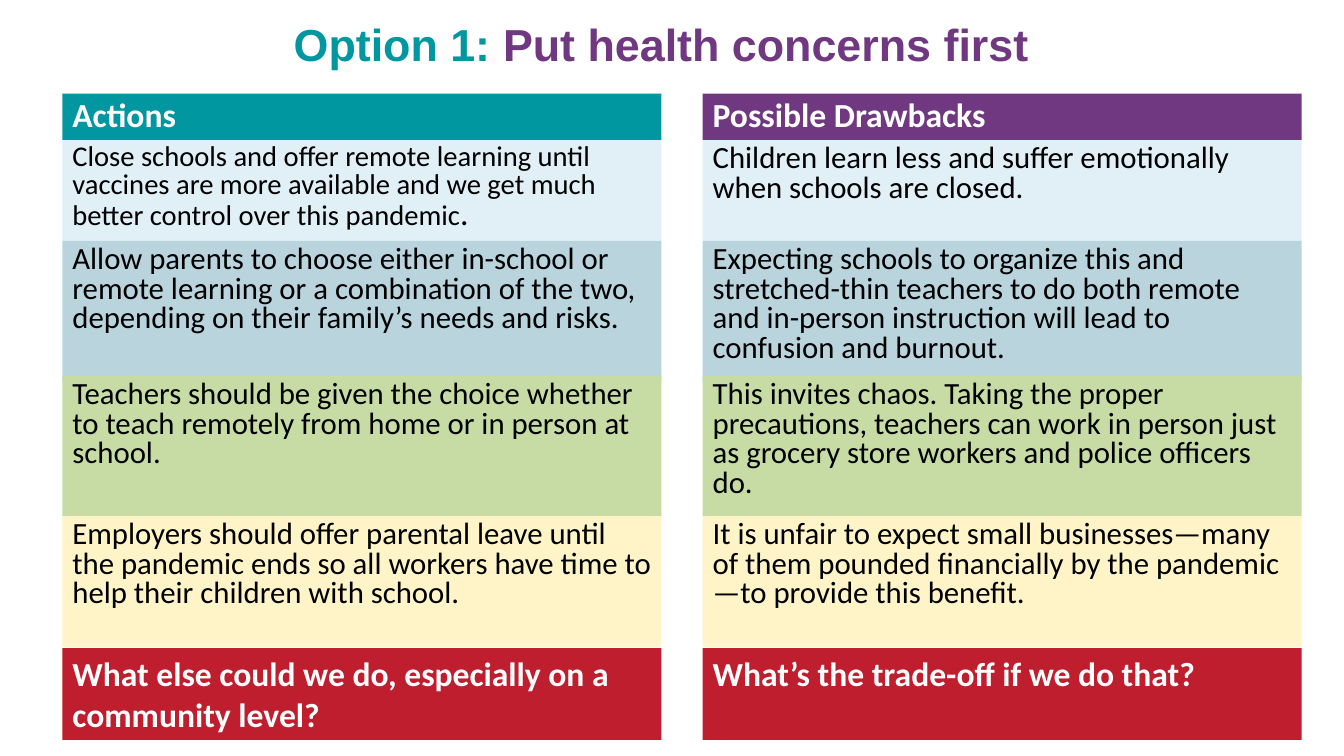
from dataclasses import dataclass

from pptx import Presentation
from pptx.dml.color import RGBColor
from pptx.enum.shapes import MSO_SHAPE
from pptx.enum.text import MSO_ANCHOR, MSO_AUTO_SIZE, PP_ALIGN
from pptx.util import Inches, Pt

RECTANGLE = MSO_SHAPE.RECTANGLE
TOP, MIDDLE, BOTTOM = MSO_ANCHOR.TOP, MSO_ANCHOR.MIDDLE, MSO_ANCHOR.BOTTOM
LEFT, CENTER = PP_ALIGN.LEFT, PP_ALIGN.CENTER
FIXED, GROW = MSO_AUTO_SIZE.NONE, MSO_AUTO_SIZE.SHAPE_TO_FIT_TEXT

TEAL, PURPLE, RED = "0097A0", "713882", "BE1E2D"
WHITE, BLACK = "FFFFFF", "000000"
ICE, STEEL, GREEN, CREAM = "E0F0F6", "B9D4DD", "C7DCA5", "FEF4C7"

HEADER = dict(size=24, color=WHITE, bold=True, anchor=BOTTOM)
BODY = dict(size=22, color=BLACK, line_spacing=0.8)
QUESTION = dict(size=24, color=WHITE, bold=True, line_spacing=1, before=0, fit=GROW)


def rgb(value):
    return RGBColor.from_string(value)


def add_span(para, text, font="Calibri", size=22, color=BLACK, bold=False):
    span = para.add_run()
    span.text = text
    span.font.name = font
    span.font.size = Pt(size)
    span.font.bold = bold
    span.font.color.rgb = rgb(color)


def write(frame, text, anchor=TOP, align=LEFT, line_spacing=0.9, before=10,
          fit=FIXED, **font):
    frame.word_wrap = True
    frame.auto_size = fit
    frame.vertical_anchor = anchor
    para = frame.paragraphs[0]
    para.alignment = align
    para.line_spacing = line_spacing
    para.space_before = Pt(before)
    spans = [(text, {})] if isinstance(text, str) else text
    for words, changes in spans:
        add_span(para, words, **{**font, **changes})


@dataclass
class OptionPage:
    page: object
    left: float = 0.62
    column_width: float = 5.94
    column_step: float = 6.35
    row_tops: tuple = (0.93, 1.39, 2.39, 3.73, 5.12, 6.43)
    row_heights: tuple = (0.46, 1, 1.39, 1.39, 1.3, 0.91)

    def title(self, spans):
        box = self.page.shapes.add_textbox(
            Inches(0.81), Inches(0.12), Inches(11.5), Inches(0.7))
        write(box.text_frame, spans, anchor=MIDDLE, align=CENTER, before=0,
              font="Arial", size=32, bold=True)

    def cell(self, column, row, text, fill, **style):
        box = self.page.shapes.add_shape(
            RECTANGLE,
            Inches(self.left + column * self.column_step),
            Inches(self.row_tops[row]),
            Inches(self.column_width),
            Inches(self.row_heights[row]))
        box.shadow.inherit = False
        box.fill.solid()
        box.fill.fore_color.rgb = rgb(fill)
        box.line.fill.background()
        write(box.text_frame, text, **style)


CLOSE_SCHOOLS = [
    ("Close schools and offer remote learning until vaccines are more available "
     "and we get much better control over this pandemic", {"size": 20.4}),
    (".", {"size": 24.1}),
]

ROWS = [
    ((TEAL, PURPLE), HEADER, ("Actions", "Possible Drawbacks")),
    ((ICE, ICE), BODY, (
        CLOSE_SCHOOLS,
        "Children learn less and suffer emotionally when schools are closed.")),
    ((STEEL, STEEL), BODY, (
        "Allow parents to choose either in-school or remote learning or a "
        "combination of the two, depending on their family’s needs and risks.",
        "Expecting schools to organize this and stretched-thin teachers to do both "
        "remote and in-person instruction will lead to confusion and burnout.")),
    ((GREEN, GREEN), BODY, (
        "Teachers should be given the choice whether to teach remotely from home "
        "or in person at school.",
        "This invites chaos. Taking the proper precautions, teachers can work in "
        "person just as grocery store workers and police officers do.")),
    ((CREAM, CREAM), BODY, (
        "Employers should offer parental leave until the pandemic ends so all "
        "workers have time to help their children with school.",
        "It is unfair to expect small businesses—many of them pounded financially "
        "by the pandemic—to provide this benefit.")),
    ((RED, RED), QUESTION, (
        "What else could we do, especially on a community level?",
        "What’s the trade-off if we do that?")),
]


def main():
    deck = Presentation()
    deck.slide_width, deck.slide_height = Inches(13.33), Inches(7.5)
    option = OptionPage(deck.slides.add_slide(deck.slide_layouts[6]))
    option.title([("Option 1: ", {"color": TEAL}),
                  ("Put health concerns first", {"color": PURPLE})])
    for row, (fills, style, texts) in enumerate(ROWS):
        for column, (fill, text) in enumerate(zip(fills, texts)):
            option.cell(column, row, text, fill, **style)
    deck.save("out.pptx")


if __name__ == "__main__":
    main()
